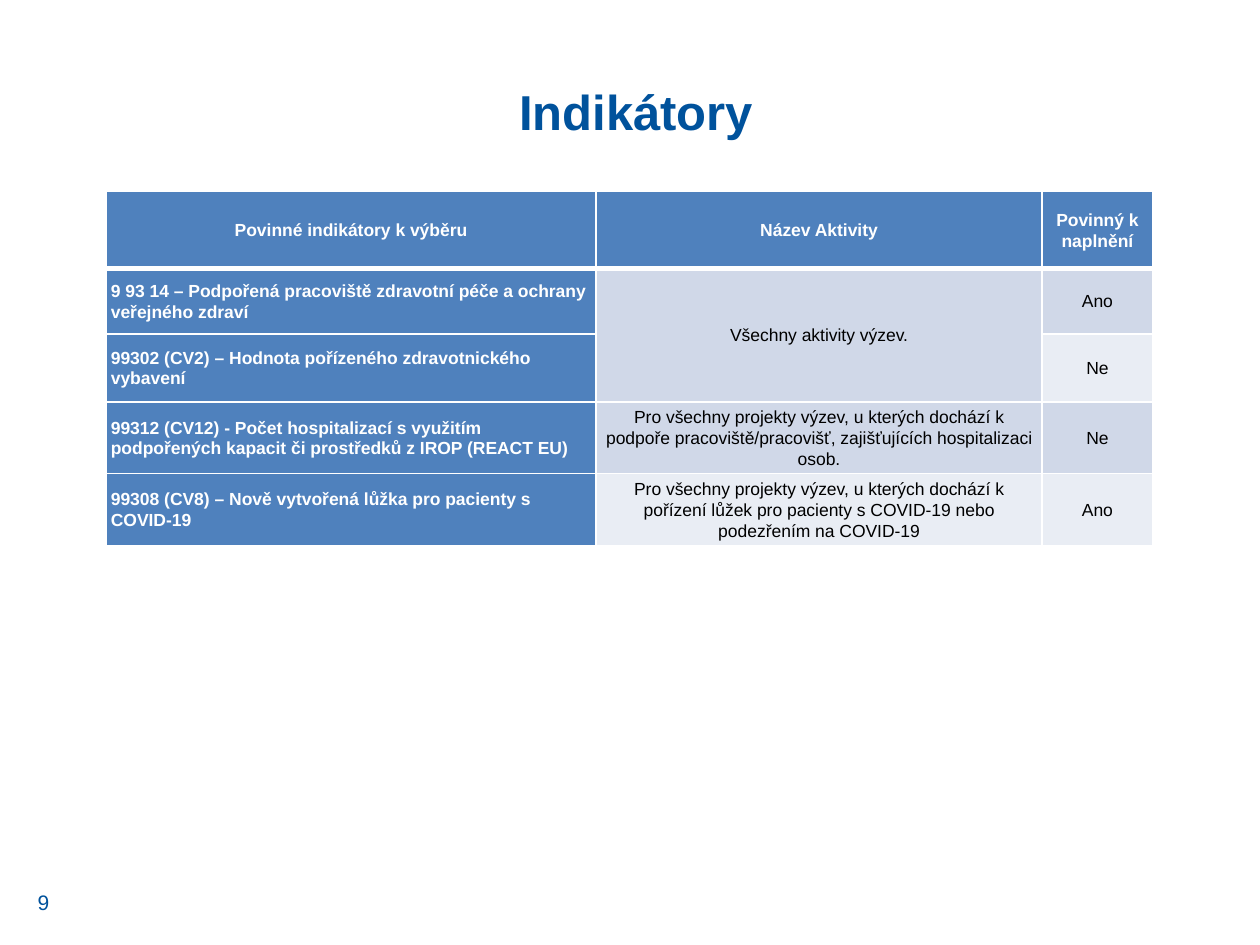
from dataclasses import dataclass

from lxml import etree
from pptx import Presentation, util as u
from pptx.dml.color import RGBColor
from pptx.enum import text
from pptx.oxml import ns

FONT = "Arial"
NAVY, BLUE, WHITE, BLACK = "00529C", "4F81BD", "FFFFFF", "000000"
BANDS = ("D0D8E8", "E9EDF4")
WIDTH, HEIGHT = 10, 7.5

COLUMN_WIDTHS = (3.89, 3.54, 0.88)
ROW_HEIGHTS = (0.61, 0.52, 0.54, 0.57, 0.57)
HEADER = ("Povinné indikátory k výběru", "Název Aktivity", "Povinný k naplnění")


@dataclass
class Indicator:
    name: str
    activity: str
    required: str


INDICATORS = (
    Indicator("9 93 14 – Podpořená pracoviště zdravotní péče a ochrany veřejného zdraví",
              "Všechny aktivity výzev.", "Ano"),
    Indicator("99302 (CV2) – Hodnota pořízeného zdravotnického vybavení", "", "Ne"),
    Indicator("99312 (CV12) - Počet hospitalizací s využitím podpořených kapacit "
              "či prostředků z IROP (REACT EU)",
              "Pro všechny projekty výzev, u kterých dochází k podpoře "
              "pracoviště/pracovišť, zajišťujících hospitalizaci osob.", "Ne"),
    Indicator("99308 (CV8) – Nově vytvořená lůžka pro pacienty s COVID-19",
              "Pro všechny projekty výzev, u kterých dochází k pořízení lůžek "
              "pro pacienty s COVID-19 nebo podezřením na COVID-19", "Ano"),
)


def color(value: str) -> RGBColor:
    return RGBColor.from_string(value)


def style_paragraph(paragraph, size: float, ink: str, bold: bool, centered: bool) -> None:
    paragraph.alignment = text.PP_ALIGN.CENTER if centered else text.PP_ALIGN.LEFT
    for run in paragraph.runs:
        run.font.name, run.font.size, run.font.bold = FONT, u.Pt(size), bold
        run.font.color.rgb = color(ink)


def add_label(slide, words: str, box: tuple, size: float, bold: bool,
              centered: bool, anchor) -> None:
    """Add a text box whose box is given as shares of the slide's size."""
    left, top, width, height = box
    shape = slide.shapes.add_textbox(u.Inches(left * WIDTH), u.Inches(top * HEIGHT),
                                     u.Inches(width * WIDTH), u.Inches(height * HEIGHT))
    frame = shape.text_frame
    frame.word_wrap = True
    frame.vertical_anchor = anchor
    frame.text = words
    style_paragraph(frame.paragraphs[0], size, NAVY, bold, centered)


def set_borders(cell, top: float, bottom: float) -> None:
    properties = cell._tc.get_or_add_tcPr()
    for side, points in (("lnL", 1), ("lnR", 1), ("lnT", top), ("lnB", bottom)):
        line = etree.SubElement(properties, ns.qn(f"a:{side}"), w=str(u.Pt(points)))
        fill = etree.SubElement(line, ns.qn("a:solidFill"))
        etree.SubElement(fill, ns.qn("a:srgbClr"), val=WHITE)


def fill_cell(table, row: int, column: int, words: str) -> None:
    cell = table.cell(row, column)
    heading = row == 0 or column == 0
    set_borders(cell, top=3 if row == 1 else 1, bottom=3 if row == 0 else 1)
    cell.fill.solid()
    cell.fill.fore_color.rgb = color(BLUE if heading else BANDS[(row - 1) % 2])
    cell.vertical_anchor = text.MSO_ANCHOR.MIDDLE
    cell.margin_left = cell.margin_right = u.Inches(0.04)
    cell.margin_top = cell.margin_bottom = 0
    cell.text_frame.text = words
    paragraph = cell.text_frame.paragraphs[0]
    paragraph.line_spacing = 1.07
    paragraph.space_after = u.Pt(8)
    style_paragraph(paragraph, 10, WHITE if heading else BLACK, heading,
                    centered=row == 0 or column > 0)


def add_indicator_table(slide) -> None:
    rows = [HEADER] + [(i.name, i.activity, i.required) for i in INDICATORS]
    table = slide.shapes.add_table(
        len(rows), len(HEADER), u.Inches(0.84), u.Inches(1.52),
        u.Inches(sum(COLUMN_WIDTHS)), u.Inches(sum(ROW_HEIGHTS))).table
    for column, width in zip(table.columns, COLUMN_WIDTHS):
        column.width = u.Inches(width)
    for row, height in zip(table.rows, ROW_HEIGHTS):
        row.height = u.Inches(height)
    for row, values in enumerate(rows):
        for column, words in enumerate(values):
            fill_cell(table, row, column, words)
    # The first two indicators share one activity
    table.cell(1, 1).merge(table.cell(2, 1))


def main() -> None:
    presentation = Presentation()
    presentation.slide_width, presentation.slide_height = u.Inches(WIDTH), u.Inches(HEIGHT)
    slide = presentation.slides.add_slide(presentation.slide_layouts[6])

    # Indicators, page number and title
    add_indicator_table(slide)
    add_label(slide, "9", (0.02, 0.93, 0.06, 0.05), 12, False, False,
              text.MSO_ANCHOR.MIDDLE)
    add_label(slide, "Indikátory", (0.1, 0.08, 0.81, 0.12), 28, True, True,
              text.MSO_ANCHOR.TOP)

    presentation.save("out.pptx")


if __name__ == "__main__":
    main()
